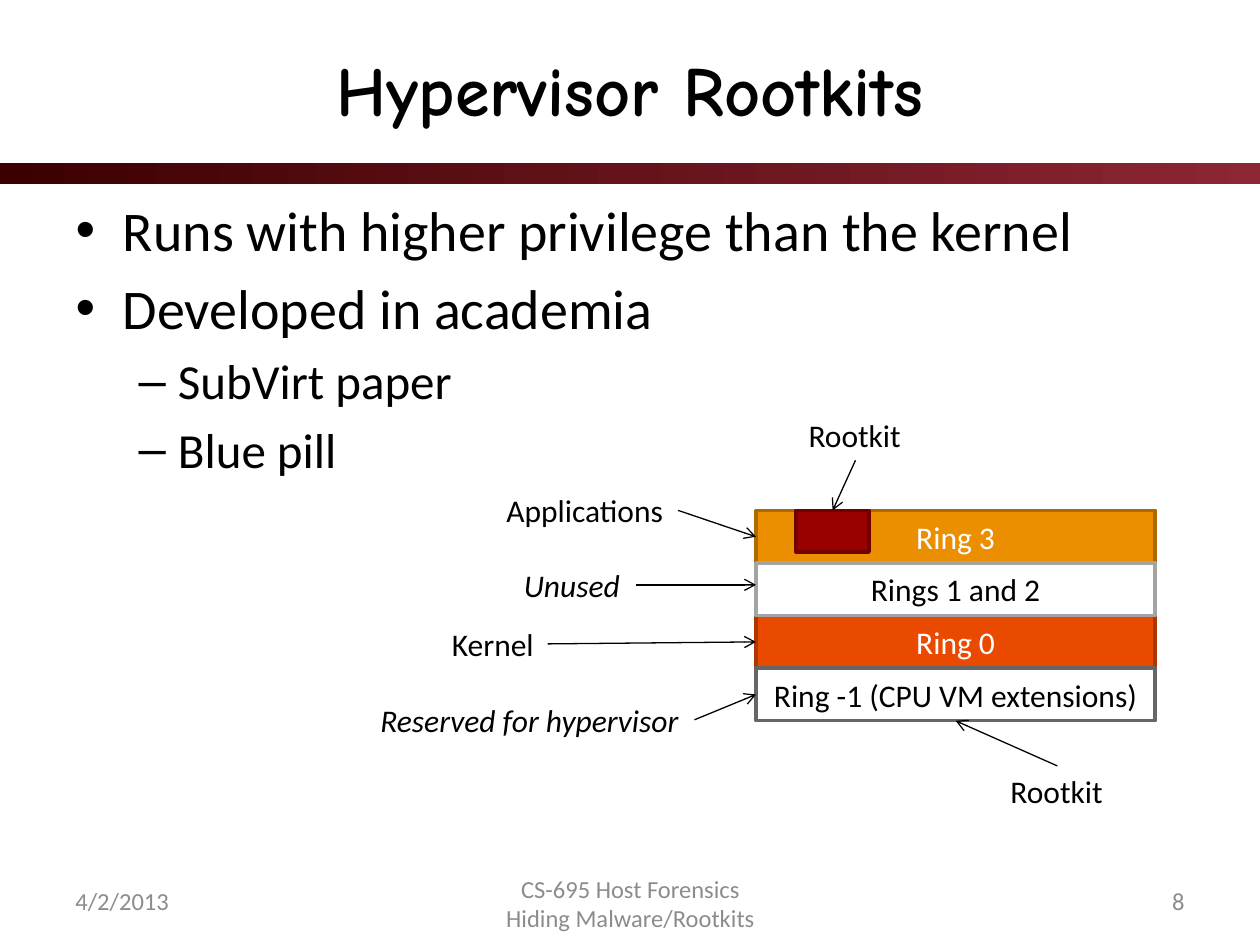
from lxml.etree import SubElement
from pptx import Presentation
from pptx.dml.color import RGBColor
from pptx.enum.shapes import MSO_CONNECTOR, MSO_SHAPE
from pptx.enum.text import MSO_ANCHOR, MSO_AUTO_SIZE, PP_ALIGN
from pptx.oxml.ns import qn
from pptx.util import Cm, Pt

STACK_LEFT, STACK_TOP, RING_WIDTH, RING_HEIGHT = 15.24, 10.29, 8.05, 1.06
LABEL_HEIGHT = 1.02
RINGS = [
    (0, "Ring 3", "EB8F00", "AE6A00", "FFFFFF"),
    (2, "Ring 0", "E94A00", "AC3700", "FFFFFF"),
    (3, "Ring -1 (CPU VM extensions)", "FFFFFF", "666666", "000000"),
    (1, "Rings 1 and 2", "FFFFFF", "A4A4A4", "000000"),
]
RING_USES = [
    ("Applications", 9.96, 9.78, 3.71, False, 10.82),
    ("Unused", 10.31, 11.28, 2.51, True, 11.79),
    ("Kernel", 8.86, 12.47, 2.18, False, 12.94),
    ("Reserved for hypervisor", 7.42, 14, 6.58, True, 14),
]
POINTS = [
    ("Runs with higher privilege than the kernel", 0),
    ("Developed in academia", 0),
    ("SubVirt paper", 1),
    ("Blue pill", 1),
]
FOOTERS = [
    ("4/2/2013", 1.27, 17.65, 4.65, PP_ALIGN.LEFT),
    ("CS-695 Host Forensics\vHiding Malware/Rootkits", 9.55, 17.7, 6.32, PP_ALIGN.CENTER),
    ("8", 19.48, 17.65, 4.65, PP_ALIGN.RIGHT),
]


def rgb(value):
    """Return the colour for a hex string."""
    return RGBColor.from_string(value)


def write(paragraph, text, size=18, color="000000", font="Calibri",
          bold=False, italic=False, align=None):
    """Put formatted text into a paragraph."""
    paragraph.text = text
    paragraph.alignment = align
    paragraph.font.size = Pt(size)
    paragraph.font.name = font
    paragraph.font.bold = bold
    paragraph.font.italic = italic
    for run in paragraph.runs:
        run.font.color.rgb = rgb(color)


def place(placeholder, left, top, width, height):
    """Move a placeholder and return its text frame."""
    placeholder.left, placeholder.top = Cm(left), Cm(top)
    placeholder.width, placeholder.height = Cm(width), Cm(height)
    placeholder.text_frame.auto_size = MSO_AUTO_SIZE.NONE
    return placeholder.text_frame


def add_block(slide, left, top, width, height, fill=None, outline=None):
    """Add a plain rectangle with an optional fill and outline."""
    block = slide.shapes.add_shape(
        MSO_SHAPE.RECTANGLE, Cm(left), Cm(top), Cm(width), Cm(height))
    block.shadow.inherit = False
    if fill:
        block.fill.solid()
        block.fill.fore_color.rgb = rgb(fill)
    if outline:
        block.line.color.rgb = rgb(outline)
        block.line.width = Pt(2)
    else:
        block.line.fill.background()
    return block


def add_divider(slide):
    """Add the gradient band below the title."""
    band = add_block(slide, 0, 3.29, 25.4, 0.43)
    band.fill.gradient()
    band.fill.gradient_angle = 0
    for stop, color in zip(band.fill.gradient_stops, ("3C0000", "8C2633")):
        stop.color.rgb = rgb(color)


def add_label(slide, text, left, top, width, italic=False):
    """Add a one-line diagram label."""
    label = slide.shapes.add_textbox(
        Cm(left), Cm(top), Cm(width), Cm(LABEL_HEIGHT)).text_frame
    label.word_wrap = False
    label.auto_size = MSO_AUTO_SIZE.SHAPE_TO_FIT_TEXT
    write(label.paragraphs[0], text, italic=italic)


def add_footer(slide, text, left, top, width, align):
    """Add a grey footer field."""
    footer = slide.shapes.add_textbox(
        Cm(left), Cm(top), Cm(width), Cm(LABEL_HEIGHT)).text_frame
    footer.word_wrap = True
    footer.vertical_anchor = MSO_ANCHOR.MIDDLE
    write(footer.paragraphs[0], text, size=14, color="8C8C8C", align=align)


def add_arrow(slide, start, end):
    """Add a thin black arrow between two points."""
    arrow = slide.shapes.add_connector(
        MSO_CONNECTOR.STRAIGHT, *(Cm(length) for length in start + end))
    arrow.line.color.rgb = rgb("000000")
    arrow.line.width = Pt(0.75)
    SubElement(arrow.line._get_or_add_ln(), qn("a:tailEnd"), type="arrow")
    SubElement(arrow._element.spPr, qn("a:effectLst"))


def add_rings(slide):
    """Draw the privilege rings and the label that points to each."""
    for row, name, fill, outline, color in RINGS:
        ring = add_block(slide, STACK_LEFT, STACK_TOP + row * RING_HEIGHT,
                         RING_WIDTH, RING_HEIGHT, fill, outline)
        write(ring.text_frame.paragraphs[0], name, color=color, align=PP_ALIGN.CENTER)
    for use, left, top, width, italic, target in RING_USES:
        add_label(slide, use, left, top, width, italic)
        add_arrow(slide, (left + width, top + LABEL_HEIGHT / 2), (STACK_LEFT, target))


def add_rootkits(slide):
    """Mark the rootkit positions in the top and bottom rings."""
    left, width, label_width = 16.05, 1.47, 2.39
    add_block(slide, left, STACK_TOP, width, 0.84, "990000", "710000")
    add_label(slide, "Rootkit", left, 8.26, label_width)
    add_arrow(slide, (left + label_width / 2, 8.26 + LABEL_HEIGHT),
              (left + width / 2, STACK_TOP))
    add_label(slide, "Rootkit", 20.12, 15.44, label_width)
    add_arrow(slide, (20.12 + label_width / 2, 15.44),
              (STACK_LEFT + RING_WIDTH / 2, STACK_TOP + 4 * RING_HEIGHT))


def main():
    """Build and save the slide."""
    deck = Presentation()
    deck.slide_width, deck.slide_height = Cm(25.4), Cm(19.05)
    slide = deck.slides.add_slide(deck.slide_layouts[1])
    add_divider(slide)

    title = place(slide.shapes.title, 1.27, 0.38, 22.86, 2.79)
    title.vertical_anchor = MSO_ANCHOR.MIDDLE
    write(title.paragraphs[0], "Hypervisor Rootkits", size=40, font="Comic Neue",
          bold=True, align=PP_ALIGN.CENTER)

    body = place(slide.placeholders[1], 1.27, 3.81, 22.86, 13.72)
    for index, (point, level) in enumerate(POINTS):
        paragraph = body.add_paragraph() if index else body.paragraphs[0]
        paragraph.level = level
        write(paragraph, point, size=28 if level else 32)
    body.paragraphs[0].space_before = Pt(0)

    add_rings(slide)
    add_rootkits(slide)
    for footer in FOOTERS:
        add_footer(slide, *footer)
    deck.save("out.pptx")


if __name__ == "__main__":
    main()
